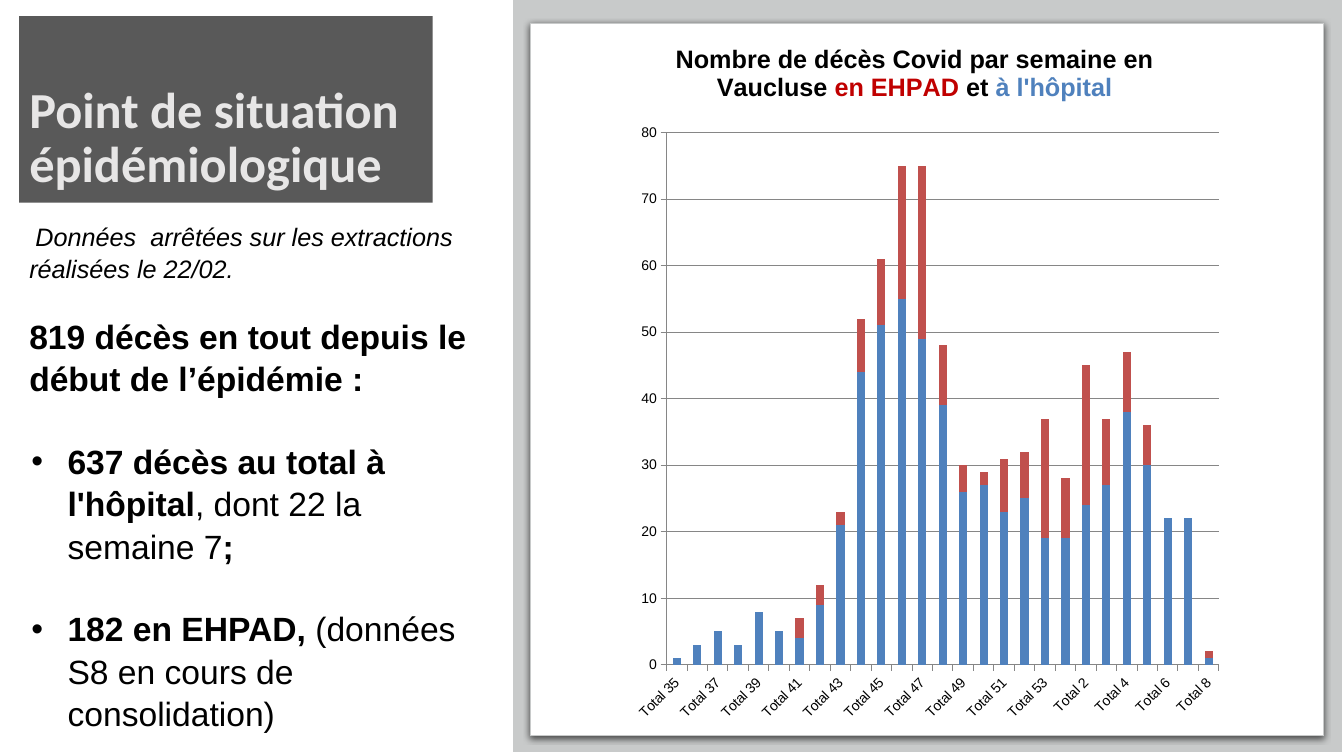
"""Build the weekly Covid deaths slide with its key figures and stacked chart."""
from lxml.etree import SubElement
from pptx import Presentation
from pptx.chart.data import CategoryChartData
from pptx.dml.color import RGBColor
from pptx.enum.chart import XL_CHART_TYPE as ChartType, XL_TICK_MARK as Tick
from pptx.enum.shapes import MSO_SHAPE as Shape
from pptx.enum.text import MSO_ANCHOR as Anchor, MSO_AUTO_SIZE as AutoSize, PP_ALIGN as Align
from pptx.oxml import parse_xml
from pptx.oxml.ns import nsdecls, qn
from pptx.util import Inches, Pt

BLACK = RGBColor(0x00, 0x00, 0x00)
WHITE = RGBColor(0xFF, 0xFF, 0xFF)
PALE_GREY = RGBColor(0xC8, 0xCA, 0xCA)
DARK_GREY = RGBColor(0x59, 0x59, 0x59)
TITLE_GREY = RGBColor(0xE7, 0xE6, 0xE6)
GRID_GREY = RGBColor(0x86, 0x86, 0x86)
HOSPITAL_BLUE = RGBColor(0x4F, 0x81, 0xBD)
CARE_HOME_RED = RGBColor(0xC0, 0x50, 0x4D)
HEADING_RED = RGBColor(0xC0, 0x00, 0x00)


def add_run(paragraph, text, size, color=BLACK, bold=False, italic=False):
    run = paragraph.add_run()
    run.text = text
    font = run.font
    font.name, font.size, font.bold, font.italic = "Arial", Pt(size), bold, italic
    font.color.rgb = color


def chart_layout(**settings):
    layout = parse_xml(f"<c:layout {nsdecls('c')}><c:manualLayout/></c:layout>")
    for tag, value in settings.items():
        SubElement(layout[0], qn(f"c:{tag}")).set("val", str(value))
    return layout


deck = Presentation()
deck.slide_width, deck.slide_height = Inches(13.33), Inches(7.5)
slide = deck.slides.add_slide(deck.slide_layouts[1])

heading = slide.shapes.title
heading.left, heading.top = Inches(0.19), Inches(0.16)
heading.width, heading.height = Inches(4.1), Inches(1.85)
heading.fill.solid()
heading.fill.fore_color.rgb = DARK_GREY
heading_frame = heading.text_frame
heading_frame.text = "Point de situation épidémiologique"
heading_frame.auto_size = AutoSize.NONE
heading_frame.vertical_anchor = Anchor.BOTTOM
heading_frame.margin_bottom = Inches(0.09)
heading_line = heading_frame.paragraphs[0]
heading_line.alignment = Align.LEFT
heading_line.line_spacing = 0.9
heading_font = heading_line.runs[0].font
heading_font.name, heading_font.size, heading_font.bold = "Calibri", Pt(36), True
heading_font.color.rgb = TITLE_GREY

figures = slide.placeholders[1]
figures.left, figures.top = Inches(0.19), Inches(2.13)
figures.width, figures.height = Inches(4.73), Inches(5.15)
figures_frame = figures.text_frame
figures_frame.auto_size = AutoSize.NONE
figures_frame.vertical_anchor = Anchor.TOP

key_points = [
    (0, False, [(" ", 16, False, True),
                ("Données  arrêtées sur les extractions réalisées le 22/02.", 18, False, True)]),
    (21.7, False, [("819 décès en tout depuis le début de l’épidémie\u00a0:", 24, True, False)]),
    (29, True, [("637 décès au total à l'hôpital", 24, True, False),
                (", dont 22 la semaine 7", 24, False, False),
                (";", 24, True, False)]),
    (29, True, [("182 en EHPAD, ", 24, True, False),
                ("(données S8 en cours de consolidation)", 24, False, False)]),
]
for index, (gap, bulleted, parts) in enumerate(key_points):
    point = figures_frame.add_paragraph() if index else figures_frame.paragraphs[0]
    point.alignment = Align.LEFT
    point.line_spacing = 1.05
    point.space_before, point.space_after = Pt(gap), Pt(0)
    for text, size, bold, italic in parts:
        add_run(point, text, size, BLACK, bold, italic)
    properties = point._p.get_or_add_pPr()
    properties.set("marL", str(Inches(0.38) if bulleted else 0))
    properties.set("indent", str(Inches(-0.36) if bulleted else 0))
    if bulleted:
        bullet_color = SubElement(properties, qn("a:buClr"))
        SubElement(bullet_color, qn("a:srgbClr")).set("val", str(BLACK))
        SubElement(properties, qn("a:buFont")).set("typeface", "Arial")
        SubElement(properties, qn("a:buChar")).set("char", "•")
    else:
        SubElement(properties, qn("a:buNone"))

backdrop = slide.shapes.add_shape(
    Shape.RECTANGLE, Inches(5.09), Inches(0), Inches(8.22), Inches(7.46))
backdrop.shadow.inherit = False
backdrop.fill.solid()
backdrop.fill.fore_color.rgb = PALE_GREY
backdrop.line.fill.background()

card = slide.shapes.add_shape(
    Shape.ROUNDED_RECTANGLE, Inches(5.26), Inches(0.23), Inches(7.87), Inches(7.07))
card.adjustments[0] = 0
card.fill.solid()
card.fill.fore_color.rgb = WHITE
card.line.color.rgb = PALE_GREY
card.line.width = Pt(0.75)
card.shadow.inherit = False
card_effects = card._element.spPr.find(qn("a:effectLst"))
card_effects.append(parse_xml(
    f'<a:outerShdw {nsdecls("a")} blurRad="{Pt(4.5)}" dist="{Pt(1.5)}" dir="5400000" '
    'algn="t" rotWithShape="0"><a:srgbClr val="000000"><a:alpha val="63000"/>'
    '</a:srgbClr></a:outerShdw>'))

weeks = [*range(35, 54), *range(1, 9)]
hospital_deaths = [1, 3, 5, 3, 8, 5, 4, 9, 21, 44, 51, 55, 49, 39, 26, 27, 23, 25,
                   19, 19, 24, 27, 38, 30, 22, 22, 1]
care_home_deaths = [None] * 6 + [3, 3, 2, 8, 10, 20, 26, 9, 4, 2, 8, 7, 18, 9,
                                 21, 10, 9, 6, None, None, 1]
deaths = CategoryChartData()
deaths.categories = [f"Total {week}" for week in weeks]
deaths.add_series("Series 1", hospital_deaths)
deaths.add_series("Series 2", care_home_deaths)
chart = slide.shapes.add_chart(
    ChartType.COLUMN_STACKED, Inches(6.19), Inches(0.26), Inches(6.02), Inches(7.04),
    deaths).chart
chart.has_legend = False
chart.font.name, chart.font.size = "Arial", Pt(10)
chart.font.color.rgb = BLACK

chart_heading = chart.chart_title.text_frame.paragraphs[0]
for text, color in [("Nombre de décès Covid par semaine en Vaucluse ", BLACK),
                    ("en EHPAD", HEADING_RED), (" et ", BLACK),
                    ("à l'hôpital", HOSPITAL_BLUE)]:
    add_run(chart_heading, text, 18, color, bold=True)
chart.chart_title.include_in_layout = False
title_element = chart.chart_title._element
for automatic in title_element.findall(qn("c:layout")):
    title_element.remove(automatic)
title_element.find(qn("c:tx")).addnext(
    chart_layout(xMode="edge", yMode="edge", x=0.08, y=0.02))

columns = chart.plots[0]
columns.gap_width, columns.overlap = 150, 100
columns.vary_by_categories = False
for series, color in zip(columns.series, (HOSPITAL_BLUE, CARE_HOME_RED)):
    series.format.fill.solid()
    series.format.fill.fore_color.rgb = color

plot_area = chart._chartSpace.chart.plotArea
for automatic in plot_area.findall(qn("c:layout")):
    plot_area.remove(automatic)
plot_area.insert(0, chart_layout(layoutTarget="inner", xMode="edge", yMode="edge",
                                 x=0.07, y=0.15, w=0.91, h=0.75))

week_axis, count_axis = chart.category_axis, chart.value_axis
for axis in (week_axis, count_axis):
    axis.major_tick_mark, axis.minor_tick_mark = Tick.OUTSIDE, Tick.NONE
    axis.format.line.color.rgb = GRID_GREY
    axis.tick_labels.font.size = Pt(10)
count_axis.minimum_scale, count_axis.maximum_scale, count_axis.major_unit = 0, 80, 10
count_axis.has_major_gridlines = True
count_axis.major_gridlines.format.line.color.rgb = GRID_GREY
week_axis._element.find(qn("c:txPr")).find(qn("a:bodyPr")).set("rot", "-2700000")
label_skip = parse_xml(f'<c:tickLblSkip {nsdecls("c")} val="2"/>')
week_axis._element.find(qn("c:noMultiLvlLbl")).addprevious(label_skip)

deck.save("out.pptx")
